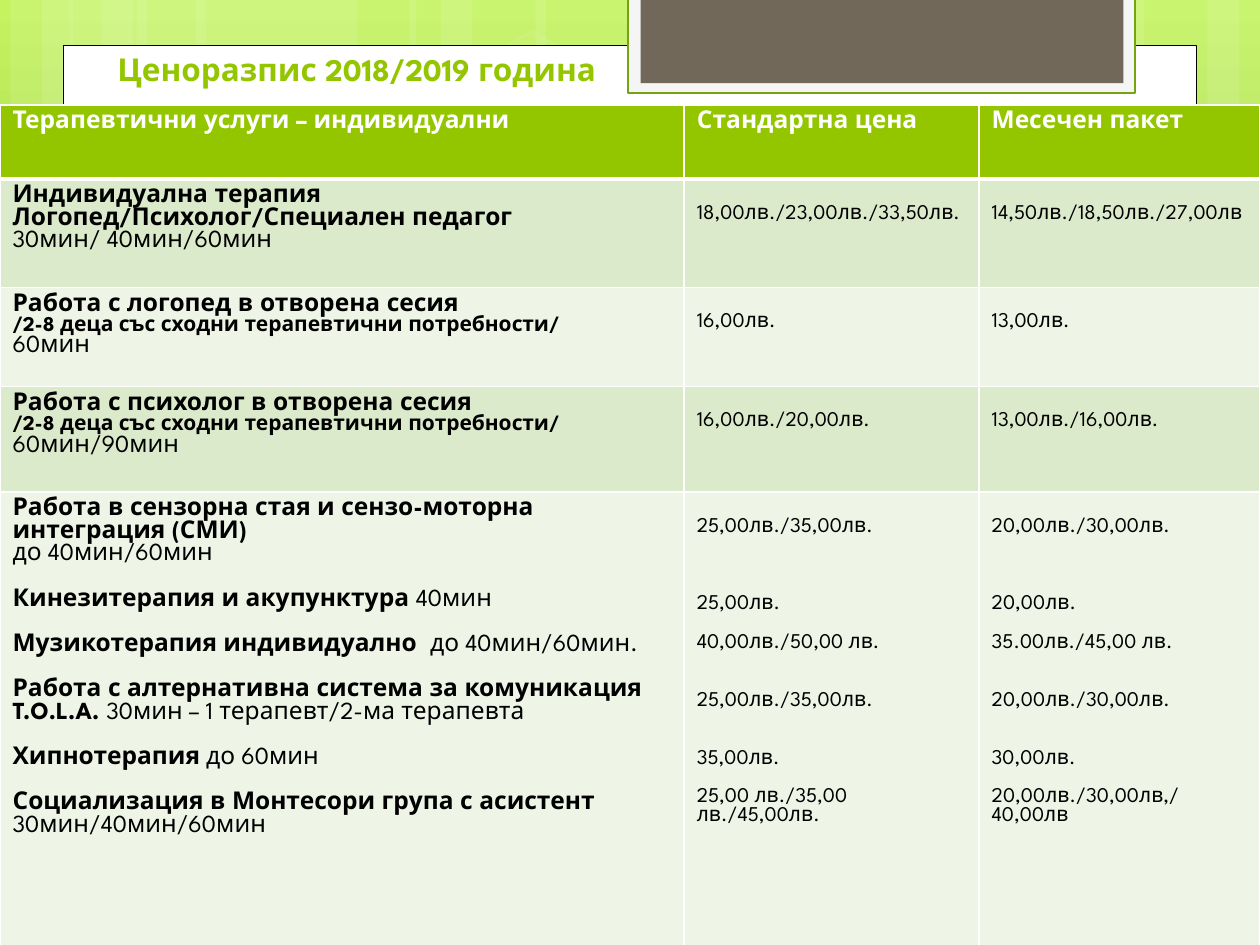
from copy import deepcopy

from lxml.etree import SubElement
from pptx import Presentation
from pptx.dml.color import RGBColor
from pptx.enum.shapes import MSO_SHAPE
from pptx.enum.text import MSO_ANCHOR
from pptx.oxml.ns import qn
from pptx.util import Pt

COLORS = {
    "white": "FFFFFF", "black": "000000", "green": "94C600", "edge": "74A510",
    "frame": "F5F5F5", "brown": "71685A", "band": "DCEACC", "pale": "EEF5E7",
}
BACKDROP = [(0, "C3F35F"), (0.62, "93BF3F"), (1, "81A53E")]
FONT = "League Spartan"
LINE_HEIGHT = 0.92
BODY, SMALL, TITLE = 14, 12, 18


def rgb(name):
    return RGBColor.from_string(COLORS[name])


class PriceSlide:
    def __init__(self, deck):
        self.page = deck.slides.add_slide(deck.slide_layouts[6])

    def backdrop(self):
        fill = self.page.background.fill
        fill.gradient()
        fill.gradient_angle = 270
        first = fill.gradient_stops[0]._gs
        first.getparent().append(deepcopy(first))
        for stop, (position, color) in zip(fill.gradient_stops, BACKDROP):
            stop.position = position
            stop.color.rgb = RGBColor.from_string(color)

    def shape(self, left, top, width, height, fill, line=None, weight=1,
              alpha=None, line_alpha=None, kind=MSO_SHAPE.RECTANGLE):
        shape = self.page.shapes.add_shape(
            kind, Pt(left), Pt(top), Pt(width), Pt(height))
        shape.shadow.inherit = False
        shape.fill.solid()
        shape.fill.fore_color.rgb = rgb(fill)
        if line:
            shape.line.color.rgb = rgb(line)
            shape.line.width = Pt(weight)
        else:
            shape.line.fill.background()
        colors = shape._element.spPr.findall(".//" + qn("a:srgbClr"))
        for color, percent in zip(colors, (alpha, line_alpha)):
            if percent:
                SubElement(color, qn("a:alpha"), val=str(percent * 1000))
        return shape

    def style(self, span, size, bold, color):
        span.font.name = FONT
        span.font.size = Pt(size)
        span.font.bold = bold
        span.font.color.rgb = rgb(color)

    def title(self, text, left, top, width, height):
        box = self.page.shapes.add_textbox(
            Pt(left), Pt(top), Pt(width), Pt(height))
        frame = box.text_frame
        frame.word_wrap = True
        frame.vertical_anchor = MSO_ANCHOR.BOTTOM
        frame.text = text
        self.style(frame.paragraphs[0].runs[0], TITLE, True, "green")

    def table(self, top, widths, heights):
        table = self.page.shapes.add_table(
            len(heights), len(widths), Pt(0), Pt(top),
            Pt(sum(widths)), Pt(sum(heights))).table
        for column, width in zip(table.columns, widths):
            column.width = Pt(width)
        for row, height in zip(table.rows, heights):
            row.height = Pt(height)
        return table

    def cell(self, cell, paragraphs, fill, color="black", bottom=1, lead=0):
        """Each paragraph is (space before, [(text, size, bold), ...])."""
        frame = cell.text_frame
        cell.margin_top = Pt(3.6 + lead)
        for index, (gap, spans) in enumerate(paragraphs):
            para = frame.add_paragraph() if index else frame.paragraphs[0]
            if gap:
                para.space_before = Pt(gap)
            for text, size, bold in spans:
                span = para.add_run()
                span.text = text
                self.style(span, size, bold, color)
        properties = cell._tc.get_or_add_tcPr()
        for side in "LRTB":
            weight = bottom if side == "B" else 1
            border = SubElement(properties, qn("a:ln" + side), w=str(Pt(weight)))
            solid = SubElement(border, qn("a:solidFill"))
            SubElement(solid, qn("a:srgbClr"), val=COLORS["white"])
        cell.fill.solid()
        cell.fill.fore_color.rgb = rgb(fill)


def bold(text, size=BODY):
    return text, size, True


def plain(text, size=BODY):
    return text, size, False


def prices(texts, blank_lines):
    line = round(SMALL * LINE_HEIGHT, 2)
    return [(round(count * line, 2), [plain(text, SMALL)])
            for text, count in zip(texts, blank_lines)]


GAP = round(BODY * LINE_HEIGHT, 2)
GROUP_NOTE = "/2-8 деца със сходни терапевтични потребности/"
HEADINGS = ["Терапевтични услуги – индивидуални", "Стандартна цена", "Месечен пакет"]

# Service paragraphs, standard prices, monthly prices
SERVICES = [
    ([(0, [bold("Индивидуална терапия Логопед/Психолог/Специален педагог")]),
      (0, [plain("30мин/ 40мин/60мин")])],
     ["18,00лв./23,00лв./33,50лв."], ["14,50лв./18,50лв./27,00лв"]),
    ([(0, [bold("Работа с логопед в отворена сесия")]),
      (0, [bold(GROUP_NOTE, SMALL)]),
      (0, [plain("60мин")])],
     ["16,00лв."], ["13,00лв."]),
    ([(0, [bold("Работа с психолог в отворена сесия")]),
      (0, [bold(GROUP_NOTE, SMALL)]),
      (0, [plain("60мин/90мин")])],
     ["16,00лв./20,00лв."], ["13,00лв./16,00лв."]),
    ([(0, [bold("Работа в сензорна стая и сензо-моторна интеграция (СМИ)")]),
      (0, [plain("до 40мин/60мин")]),
      (GAP, [bold("Кинезитерапия и акупунктура "), plain("40мин")]),
      (GAP, [bold("Музикотерапия индивидуално  "), plain("до 40мин/60мин.")]),
      (GAP, [bold("Работа с алтернативна система за комуникация T.O.L.A. "),
             plain("30мин – 1 терапевт/2-ма терапевта")]),
      (GAP, [bold("Хипнотерапия"), plain(" до 60мин")]),
      (GAP, [bold("Социализация в Монтесори група с асистент")]),
      (0, [plain("30мин/40мин/60мин")])],
     ["25,00лв./35,00лв.", "25,00лв.", "40,00лв./50,00 лв.",
      "25,00лв./35,00лв.", "35,00лв.", "25,00 лв./35,00 лв./45,00лв."],
     ["20,00лв./30,00лв.", "20,00лв.", "35.00лв./45,00 лв.",
      "20,00лв./30,00лв.", "30,00лв.", "20,00лв./30,00лв,/40,00лв"]),
]
BLANK_LINES = [0, 3, 1, 2, 2, 1]


def main():
    deck = Presentation()
    deck.slide_width, deck.slide_height = Pt(720), Pt(540)
    slide = PriceSlide(deck)

    # Backdrop with translucent stripes
    slide.backdrop()
    stripes = [(528, 126), (690, 36), (648, 60)]
    for left, wide in ((6, 126), (40, 126), (234, 222)):
        stripes += [(left, 36), (left + 18, 60), (left + 72, wide)]
    for left, width in stripes:
        slide.shape(left, 0, width, 540, "white", alpha=10)
    hexagon = slide.shape(240.5, 26, 126, 109.5, "white", "white", alpha=4,
                          line_alpha=8, kind=MSO_SHAPE.HEXAGON)
    hexagon.adjustments[0] = 0.29
    hexagon.rotation = 30

    # White panel and the framed tab at the top
    slide.shape(36, 26, 648, 486.5, "white", "black", 0.5)
    slide.shape(359, -1.5, 289.5, 54.5, "frame", "edge", 1.25)
    slide.shape(366, -1.5, 276, 49, "brown")
    slide.title("Ценоразпис 2018/2019 година", 60, 24, 575, 30)

    # Price table
    table = slide.table(60, [391, 168.5, 160.5], [42.3, 62, 56.6, 60.3, 289])
    for column, heading in enumerate(HEADINGS):
        slide.cell(table.cell(0, column), [(0, [bold(heading)])],
                   "green", "white", bottom=3)
    for row, (service, *price_columns) in enumerate(SERVICES, 1):
        fill = "band" if row % 2 else "pale"
        slide.cell(table.cell(row, 0), service, fill)
        for column, texts in enumerate(price_columns, 1):
            slide.cell(table.cell(row, column), prices(texts, BLANK_LINES),
                       fill, lead=SMALL * LINE_HEIGHT)

    deck.save("out.pptx")


if __name__ == "__main__":
    main()
